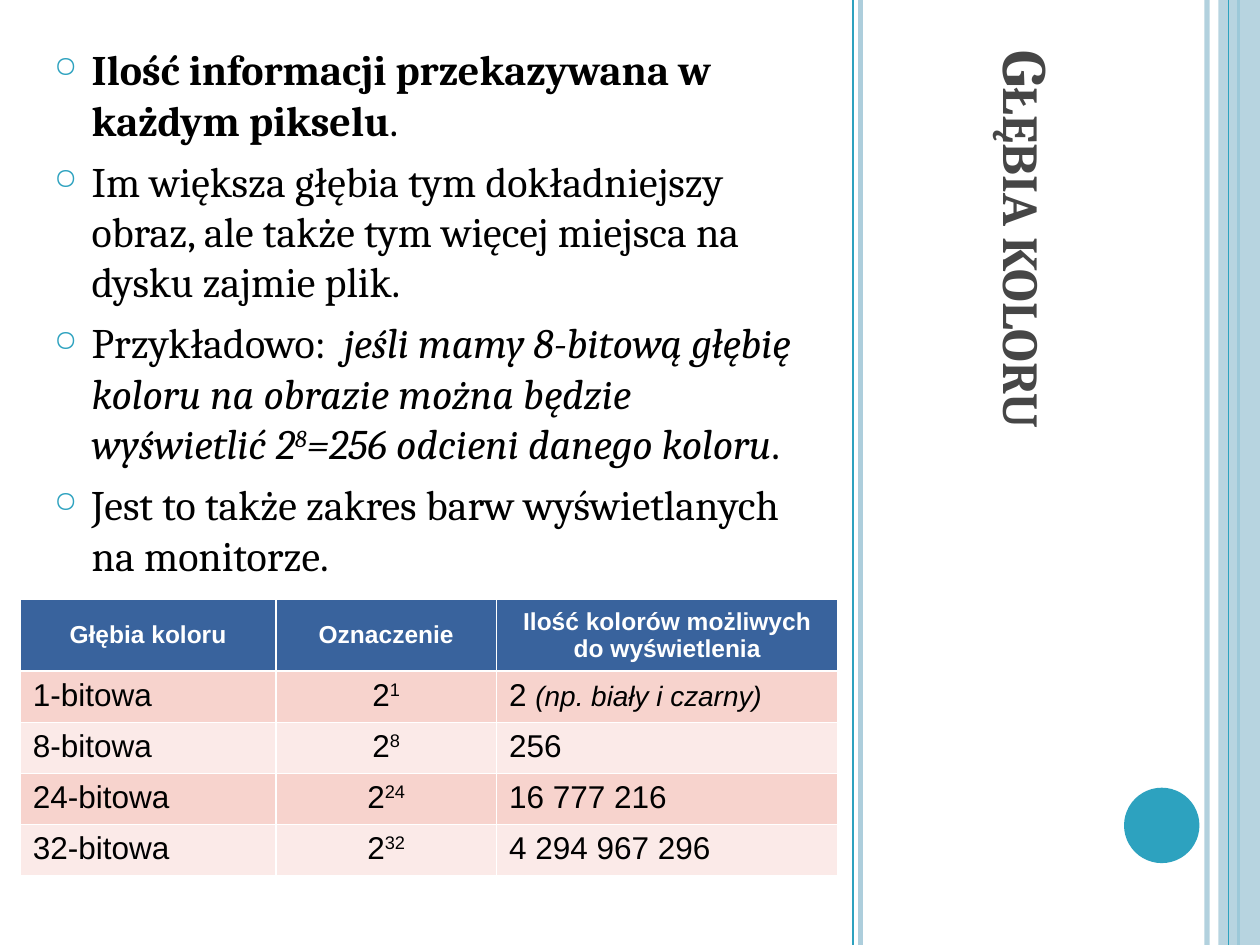
from lxml import etree
from pptx import Presentation
from pptx.dml.color import RGBColor
from pptx.enum.shapes import MSO_CONNECTOR, MSO_SHAPE
from pptx.enum.text import MSO_ANCHOR, PP_ALIGN
from pptx.oxml.ns import qn
from pptx.util import Cm, Pt

STRAIGHT = MSO_CONNECTOR.STRAIGHT
RECTANGLE, OVAL = MSO_SHAPE.RECTANGLE, MSO_SHAPE.OVAL
MIDDLE, BOTTOM = MSO_ANCHOR.MIDDLE, MSO_ANCHOR.BOTTOM
LEFT, CENTER = PP_ALIGN.LEFT, PP_ALIGN.CENTER

SLIDE_WIDTH, SLIDE_HEIGHT = 25.4, 19.05
TEAL, PALE_BLUE, DARK_GREY = "2DA2BF", "ADCEDC", "464646"
BLACK, WHITE = "000000", "FFFFFF"
HEADER_FILL = "39639D"
BAND_FILLS = ["F7D3CD", "FBEAE8"]

TITLE = "Głębia koloru"
POINTS = [
    [("Ilość informacji przekazywana w każdym pikselu", "bold"), (".", "")],
    [("Im większa głębia tym dokładniejszy obraz, ale także tym więcej "
      "miejsca na dysku zajmie plik.", "")],
    [("Przykładowo:  ", ""),
     ("jeśli mamy 8-bitową głębię koloru na obrazie można będzie wyświetlić 2", "italic"),
     ("8", "italic super"), ("=256 odcieni danego koloru", "italic"), (".", "")],
    [("Jest to także zakres barw wyświetlanych na monitorze.", "")],
]
HEADERS = ["Głębia koloru", "Oznaczenie", "Ilość kolorów możliwych do wyświetlenia"]
DEPTHS = [
    (1, "2 ", "(np. biały i czarny)"),
    (8, "256", ""),
    (24, "16 777 216", ""),
    (32, "4 294 967 296", ""),
]
COLUMN_WIDTHS = [5.15, 4.45, 6.88]
ROW_HEIGHT = 1.03
STRIPES = [
    (24.33, PALE_BLUE, 3, 93),
    (17.35, PALE_BLUE, 3, 100),
    (17.2, TEAL, 1, 100),
    (24.97, TEAL, 1.5, 100),
]
BAND_LEFT = 24.56
INNER_STRIPE = (24.77, TEAL, 0.75, 100)


def rgb(color):
    return RGBColor.from_string(color)


def set_opacity(part, percent):
    color = next(part.iter(qn("a:srgbClr")))
    etree.SubElement(color, qn("a:alpha")).set("val", str(percent * 1000))


def add_stripe(slide, x, color, width, opacity):
    stripe = slide.shapes.add_connector(STRAIGHT, Cm(x), 0, Cm(x), Cm(SLIDE_HEIGHT))
    stripe.line.color.rgb = rgb(color)
    stripe.line.width = Pt(width)
    if opacity < 100:
        set_opacity(stripe.line._ln, opacity)
    etree.SubElement(stripe._element.spPr, qn("a:effectLst"))


def add_plain_shape(slide, kind, box, color):
    shape = slide.shapes.add_shape(kind, *map(Cm, box))
    shape.shadow.inherit = False
    shape.fill.solid()
    shape.fill.fore_color.rgb = rgb(color)
    shape.line.fill.background()
    return shape


def add_run(paragraph, text, size, font, color, style=""):
    run = paragraph.add_run()
    run.text = text
    run.font.size = Pt(size)
    run.font.name = font
    run.font.color.rgb = rgb(color)
    run.font.bold = "bold" in style
    run.font.italic = "italic" in style
    if "super" in style:
        run.font._element.set("baseline", "30000")
    return run


def add_bullet(paragraph):
    properties = paragraph._p.get_or_add_pPr()
    properties.set("marL", str(Cm(0.76)))
    properties.set("indent", str(-Cm(0.76)))
    bullet_color = etree.SubElement(properties, qn("a:buClr"))
    etree.SubElement(bullet_color, qn("a:srgbClr")).set("val", TEAL)
    etree.SubElement(properties, qn("a:buSzPct")).set("val", "70000")
    etree.SubElement(properties, qn("a:buChar")).set("char", "○")


def add_decoration(slide):
    for stripe in STRIPES:
        add_stripe(slide, *stripe)
    band_box = (BAND_LEFT, 0, SLIDE_WIDTH - BAND_LEFT, SLIDE_HEIGHT)
    band = add_plain_shape(slide, RECTANGLE, band_box, PALE_BLUE)
    set_opacity(band._element.spPr, 87)
    add_stripe(slide, *INNER_STRIPE)
    add_plain_shape(slide, OVAL, (22.66, 15.88, 1.52, 1.52), TEAL)


def add_title(slide):
    title = slide.shapes.add_textbox(Cm(11.76), Cm(8.86), Cm(17.53), Cm(1.35))
    title.rotation = 90
    frame = title.text_frame
    frame.word_wrap = True
    frame.vertical_anchor = BOTTOM
    run = add_run(frame.paragraphs[0], TITLE, 36, "Cambria", DARK_GREY, "bold")
    run.font._element.set("cap", "small")


def add_points(slide):
    frame = slide.shapes.add_textbox(Cm(0.84), Cm(0.76), Cm(15.67), Cm(11.15)).text_frame
    frame.word_wrap = True
    for index, point in enumerate(POINTS):
        paragraph = frame.add_paragraph() if index else frame.paragraphs[0]
        paragraph.space_before = Pt(6)
        add_bullet(paragraph)
        for text, style in point:
            add_run(paragraph, text, 24, "Cambria", BLACK, style)


def fill_cell(cell, color, alignment, runs, text_color=BLACK):
    cell.fill.solid()
    cell.fill.fore_color.rgb = rgb(color)
    paragraph = cell.text_frame.paragraphs[0]
    paragraph.alignment = alignment
    for text, size, style in runs:
        add_run(paragraph, text, size, "Arial", text_color, style)


def add_depth_table(slide):
    row_count = len(DEPTHS) + 1
    table = slide.shapes.add_table(
        row_count, len(HEADERS), Cm(0.41), Cm(12.09),
        Cm(sum(COLUMN_WIDTHS)), Cm(ROW_HEIGHT * row_count)).table
    for column, width in zip(table.columns, COLUMN_WIDTHS):
        column.width = Cm(width)
    for row in table.rows:
        row.height = Cm(ROW_HEIGHT)
    for column, header in enumerate(HEADERS):
        cell = table.cell(0, column)
        cell.vertical_anchor = MIDDLE
        fill_cell(cell, HEADER_FILL, CENTER, [(header, 14, "bold")], WHITE)
    for row, (bits, colors, example) in enumerate(DEPTHS, 1):
        band = BAND_FILLS[(row - 1) % 2]
        color_runs = [(colors, 18, "")]
        if example:
            color_runs.append((example, 16, "italic"))
        fill_cell(table.cell(row, 0), band, LEFT, [(f"{bits}-bitowa", 18, "")])
        fill_cell(table.cell(row, 1), band, CENTER, [("2", 18, ""), (str(bits), 18, "super")])
        fill_cell(table.cell(row, 2), band, LEFT, color_runs)


def main():
    presentation = Presentation()
    presentation.slide_width = Cm(SLIDE_WIDTH)
    presentation.slide_height = Cm(SLIDE_HEIGHT)
    slide = presentation.slides.add_slide(presentation.slide_layouts[6])
    add_decoration(slide)
    add_title(slide)
    add_points(slide)
    add_depth_table(slide)
    presentation.save("out.pptx")


if __name__ == "__main__":
    main()
